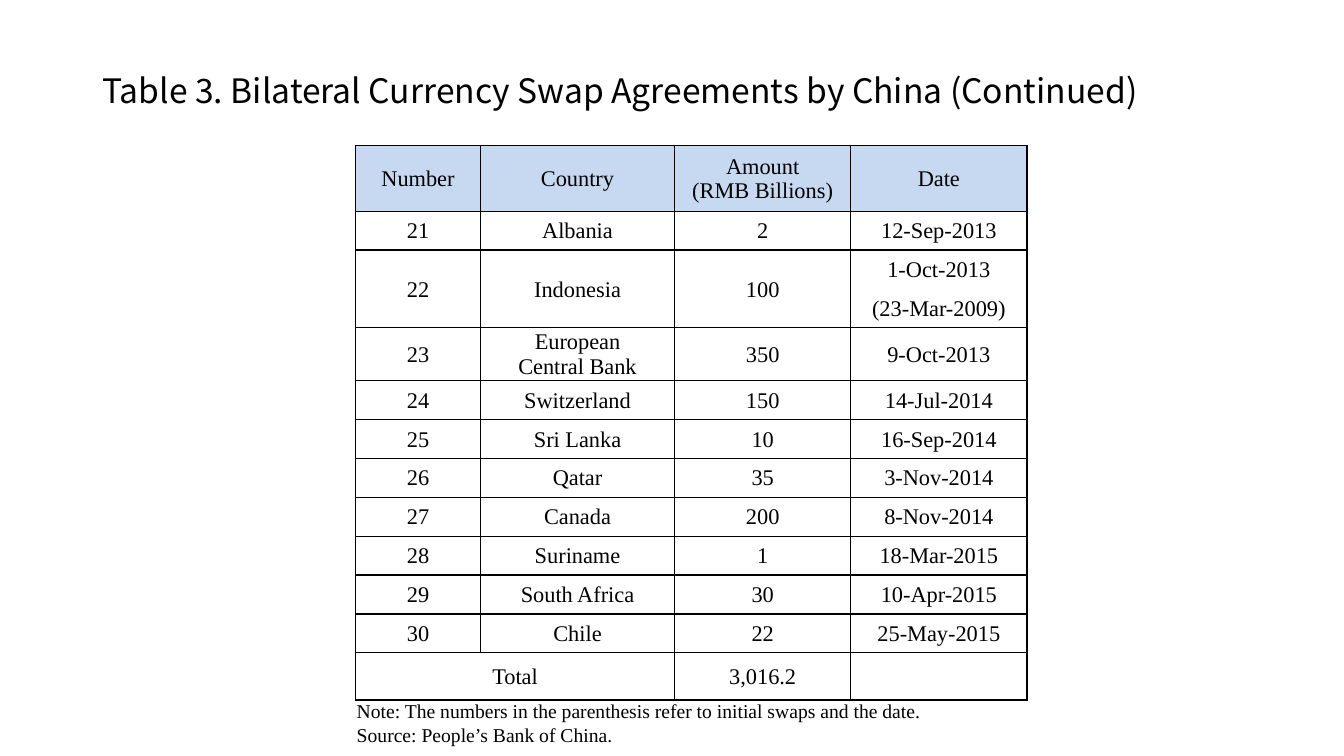
"""Build a slide listing bilateral currency swap agreements by China."""
from collections.abc import Sequence
from dataclasses import dataclass

from lxml import etree
from pptx import Presentation
from pptx import util as u
from pptx.dml.color import RGBColor
from pptx.enum import text
from pptx.oxml import ns
from pptx.slide import Slide
from pptx.table import Table, _Cell
from pptx.text.text import _Paragraph

COLORS = {"ink": "000000", "header": "C6D9F1"}
TITLE_FONT, TABLE_FONT = "Noto Sans CJK KR", "Times New Roman"
NO_STYLE = "{2D5ABB26-0587-4C30-8999-92F81FD0307C}"
LEFT, TOP = 8.96, 3.67
COLUMN_WIDTHS = (3.15, 4.89, 4.44, 4.44)
HEADER_HEIGHT, ROW_HEIGHT, BANK_HEIGHT, TOTAL_HEIGHT = 1.65, 0.98, 1.33, 1.19
NOTE_HEIGHT = 0.59


@dataclass(frozen=True)
class TableRow:
    """One table row with its height in centimetres."""

    values: tuple[str, ...]
    height: float = ROW_HEIGHT
    fill: str = ""


AGREEMENTS = (
    TableRow(("Number", "Country", "Amount\v(RMB Billions)", "Date"), HEADER_HEIGHT, "header"),
    TableRow(("21", "Albania", "2", "12-Sep-2013")),
    TableRow(("22", "Indonesia", "100", "1-Oct-2013")),
    TableRow(("", "", "", "(23-Mar-2009)")),
    TableRow(("23", "European\nCentral Bank", "350", "9-Oct-2013"), BANK_HEIGHT),
    TableRow(("24", "Switzerland", "150", "14-Jul-2014")),
    TableRow(("25", "Sri Lanka", "10", "16-Sep-2014")),
    TableRow(("26", "Qatar", "35", "3-Nov-2014")),
    TableRow(("27", "Canada", "200", "8-Nov-2014")),
    TableRow(("28", "Suriname", "1", "18-Mar-2015")),
    TableRow(("29", "South Africa", "30", "10-Apr-2015")),
    TableRow(("30", "Chile", "22", "25-May-2015")),
    TableRow(("Total", "", "3,016.2", ""), TOTAL_HEIGHT),
)
NOTES = (
    TableRow(("Note: The numbers in the parenthesis refer to initial swaps and the date.",), NOTE_HEIGHT),
    TableRow(("Source: People’s Bank of China.",), NOTE_HEIGHT),
)
OPEN_EDGES = {(2, 3): "LRT", (3, 3): "LRB"}


def format_paragraph(paragraph: _Paragraph, font: str, size: float, alignment: text.PP_ALIGN) -> None:
    """Set the font, size, colour and alignment of a paragraph."""
    paragraph.alignment = alignment
    paragraph.font.name = font
    paragraph.font.size = u.Pt(size)
    paragraph.font.color.rgb = RGBColor.from_string(COLORS["ink"])


def set_borders(cell: _Cell, edges: str) -> None:
    """Draw the named cell edges and leave the others blank."""
    properties = cell._tc.get_or_add_tcPr()
    for edge in "LRTB":
        line = etree.SubElement(properties, ns.qn(f"a:ln{edge}"), w=str(u.Pt(1)))
        if edge in edges:
            fill = etree.SubElement(line, ns.qn("a:solidFill"))
            etree.SubElement(fill, ns.qn("a:srgbClr"), val=COLORS["ink"])
        else:
            etree.SubElement(line, ns.qn("a:noFill"))


def fill_cell(cell: _Cell, value: str, fill: str, edges: str, size: float, alignment: text.PP_ALIGN) -> None:
    """Write one cell and format its text, borders and fill."""
    cell.text = value
    cell.vertical_anchor = text.MSO_ANCHOR.MIDDLE
    cell.margin_left = cell.margin_right = cell.margin_top = u.Cm(0.03)
    cell.margin_bottom = 0
    for paragraph in cell.text_frame.paragraphs:
        format_paragraph(paragraph, TABLE_FONT, size, alignment)
    set_borders(cell, edges)
    if fill:
        cell.fill.solid()
        cell.fill.fore_color.rgb = RGBColor.from_string(COLORS[fill])
    else:
        cell.fill.background()


def add_plain_table(slide: Slide, top: float, widths: Sequence[float], rows: Sequence[TableRow]) -> Table:
    """Add an unstyled table with the given column widths and row heights."""
    shape = slide.shapes.add_table(
        len(rows), len(widths), u.Cm(LEFT), u.Cm(top),
        u.Cm(sum(widths)), u.Cm(sum(row.height for row in rows)),
    )
    table = shape.table
    table.first_row = table.horz_banding = False
    table._tbl.tblPr.find(ns.qn("a:tableStyleId")).text = NO_STYLE
    for column, width in zip(table.columns, widths):
        column.width = u.Cm(width)
    for table_row, row in zip(table.rows, rows):
        table_row.height = u.Cm(row.height)
    return table


def add_title(slide: Slide, title: str) -> None:
    """Place and format the slide title."""
    shape = slide.shapes.title
    shape.left, shape.top, shape.width, shape.height = u.Cm(2.33), u.Cm(1.01), u.Cm(29.21), u.Cm(2.65)
    frame = shape.text_frame
    frame.text = title
    frame.auto_size = text.MSO_AUTO_SIZE.NONE
    frame.vertical_anchor = text.MSO_ANCHOR.MIDDLE
    paragraph = frame.paragraphs[0]
    paragraph.line_spacing = 0.9
    format_paragraph(paragraph, TITLE_FONT, 24, text.PP_ALIGN.LEFT)


def add_agreements(slide: Slide) -> None:
    """Add the table of swap agreements."""
    table = add_plain_table(slide, TOP, COLUMN_WIDTHS, AGREEMENTS)
    for row_index, row in enumerate(AGREEMENTS):
        for column_index, value in enumerate(row.values):
            edges = OPEN_EDGES.get((row_index, column_index), "LRTB")
            fill_cell(table.cell(row_index, column_index), value, row.fill, edges, 16, text.PP_ALIGN.CENTER)
    for column_index in range(3):
        table.cell(2, column_index).merge(table.cell(3, column_index))
    total_row = len(AGREEMENTS) - 1
    table.cell(total_row, 0).merge(table.cell(total_row, 1))


def add_notes(slide: Slide) -> None:
    """Add the note and source directly below the agreements."""
    top = TOP + sum(row.height for row in AGREEMENTS)
    table = add_plain_table(slide, top, (sum(COLUMN_WIDTHS),), NOTES)
    for index, row in enumerate(NOTES):
        edges = "" if index else "T"
        fill_cell(table.cell(index, 0), row.values[0], row.fill, edges, 14, text.PP_ALIGN.LEFT)


def main() -> None:
    """Build and save the presentation."""
    presentation = Presentation()
    presentation.slide_width, presentation.slide_height = u.Cm(33.87), u.Cm(19.05)
    slide = presentation.slides.add_slide(presentation.slide_layouts[5])
    add_title(slide, "Table 3. Bilateral Currency Swap Agreements by China (Continued)")
    add_agreements(slide)
    add_notes(slide)
    presentation.save("out.pptx")


if __name__ == "__main__":
    main()
